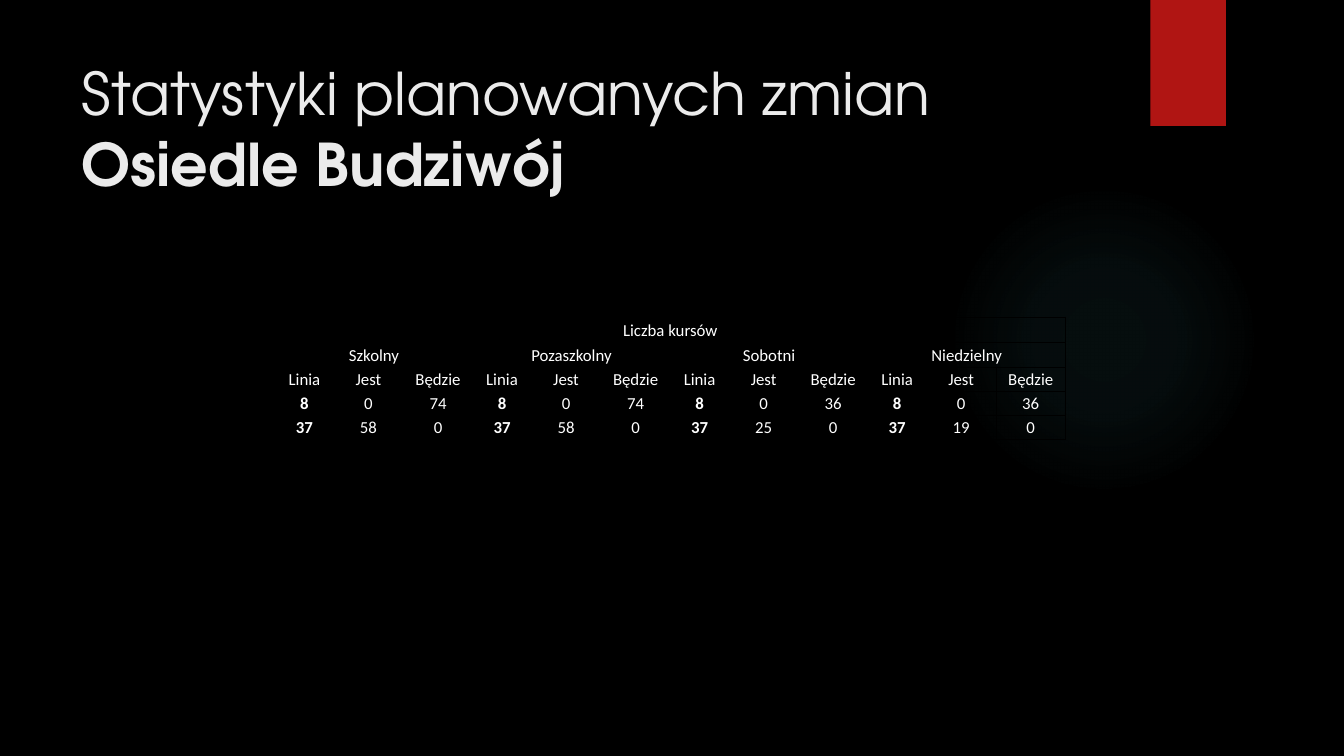
from lxml import etree
from pptx import Presentation
from pptx.dml.color import RGBColor
from pptx.enum.shapes import MSO_SHAPE
from pptx.enum.text import MSO_ANCHOR, PP_ALIGN
from pptx.oxml import parse_xml
from pptx.oxml.ns import nsdecls
from pptx.util import Inches, Pt

OVAL, RECTANGLE = MSO_SHAPE.OVAL, MSO_SHAPE.RECTANGLE
MIDDLE, CENTER = MSO_ANCHOR.MIDDLE, PP_ALIGN.CENTER

COLORS = {
    "background": "000000",
    "glow": "50B9C1",
    "ribbon": "B01513",
    "title": "EBEBEB",
    "outline": "DD371A",
    "text": "FFFFFF",
    "border": "000000",
}
GROUPS = ["Szkolny", "Pozaszkolny", "Sobotni", "Niedzielny"]
HEADINGS = ["Linia", "Jest", "Będzie"]
COURSES = [
    ["8", "0", "74", "8", "0", "74", "8", "0", "36", "8", "0", "36"],
    ["37", "58", "0", "37", "58", "0", "37", "25", "0", "37", "19", "0"],
]
GROUP_WIDTHS = [0.58, 0.69, 0.69]
ROW_HEIGHTS = [0.25, 0.24, 0.24, 0.24, 0.24]


def add_span(para, text, font, size, color, bold=False):
    span = para.add_run()
    span.text = text
    span.font.name = font
    span.font.size = Pt(size)
    span.font.bold = bold
    span.font.color.rgb = RGBColor.from_string(COLORS[color])
    return span


def line_xml(tag, color, width):
    """Return a solid line element of the given width in points."""
    return parse_xml(
        f'<a:{tag} {nsdecls("a")} w="{Pt(width)}"><a:solidFill>'
        f'<a:srgbClr val="{COLORS[color]}"/></a:solidFill></a:{tag}>'
    )


deck = Presentation()
deck.slide_width, deck.slide_height = Inches(13.33), Inches(7.5)
page = deck.slides.add_slide(deck.slide_layouts[6])
page.background.fill.solid()
page.background.fill.fore_color.rgb = RGBColor.from_string(COLORS["background"])

# Soft glow
glow = page.shapes.add_shape(OVAL, Inches(9.41), Inches(1.83), Inches(3.08), Inches(3.08))
glow.shadow.inherit = False
glow.line.fill.background()
glow.fill.gradient()
gradient = glow.fill._xPr.gradFill
for child in list(gradient):
    gradient.remove(child)
stops = "".join(
    f'<a:gs pos="{position * 1000}"><a:srgbClr val="{COLORS["glow"]}">'
    f'<a:alpha val="{alpha * 1000}"/></a:srgbClr></a:gs>'
    for position, alpha in [(0, 7), (36, 6), (69, 0)]
)
gradient.append(parse_xml(f'<a:gsLst {nsdecls("a")}>{stops}</a:gsLst>'))
gradient.append(parse_xml(
    f'<a:path {nsdecls("a")} path="circle">'
    '<a:fillToRect l="50000" t="50000" r="50000" b="50000"/></a:path>'
))

# Ribbon with a shadow below it
ribbon = page.shapes.add_shape(RECTANGLE, Inches(11.41), 0, Inches(0.75), Inches(1.25))
ribbon.shadow.inherit = False
ribbon.fill.solid()
ribbon.fill.fore_color.rgb = RGBColor.from_string(COLORS["ribbon"])
ribbon.line.fill.background()
effects = ribbon._element.spPr.find("{*}effectLst")
effects.append(parse_xml(
    f'<a:outerShdw {nsdecls("a")} blurRad="{Pt(3)}" dist="{Pt(2)}" dir="5400000" rotWithShape="0">'
    '<a:srgbClr val="000000"><a:alpha val="45000"/></a:srgbClr></a:outerShdw>'
))

# Title
title = page.shapes.add_textbox(Inches(0.71), Inches(0.5), Inches(10.29), Inches(1.53))
title.text_frame.word_wrap = True
title.text_frame.vertical_anchor = MIDDLE
para = title.text_frame.paragraphs[0]
add_span(para, "Statystyki planowanych zmian", "TeX Gyre Adventor", 42, "title")
para.add_line_break()
estate = add_span(para, "Osiedle Budziwój", "TeX Gyre Adventor", 42, "title", bold=True)
estate.font._element.insert(0, line_xml("ln", "outline", 0.75))

# Table of course counts
rows = [
    ["Liczba kursów"] + [""] * 11,
    [text for group in GROUPS for text in (group, "", "")],
    HEADINGS * len(GROUPS),
    *COURSES,
]
table = page.shapes.add_table(
    len(rows), 12, Inches(2.73), Inches(3.15), Inches(7.87), Inches(1.21)
).table
table.first_row = table.horz_banding = False
for column, width in zip(table.columns, GROUP_WIDTHS * len(GROUPS)):
    column.width = Inches(width)
for row, height in zip(table.rows, ROW_HEIGHTS):
    row.height = Inches(height)

for r, texts in enumerate(rows):
    for c, text in enumerate(texts):
        cell = table.cell(r, c)
        cell.vertical_anchor = MIDDLE
        cell.margin_left = cell.margin_right = cell.margin_top = Inches(0.01)
        cell.margin_bottom = 0
        cell.fill.background()
        heavy_edges = {
            "lnL": r < 2 or c == 0,
            "lnR": r < 2,
            "lnT": r < 2,
            "lnB": r == 0,
        }
        properties = cell._tc.get_or_add_tcPr()
        for index, (edge, heavy) in enumerate(heavy_edges.items()):
            properties.insert(index, line_xml(edge, "border", 1 if heavy else 0.5))
        para = cell.text_frame.paragraphs[0]
        para.alignment = CENTER
        if text:
            add_span(para, text, "Calibri", 12, "text", bold=r > 2 and c % 3 == 0)
        else:
            para.font.size = Pt(12)

table.cell(0, 0).merge(table.cell(0, 11))
for first in range(0, 12, 3):
    table.cell(1, first).merge(table.cell(1, first + 2))

deck.save("out.pptx")
